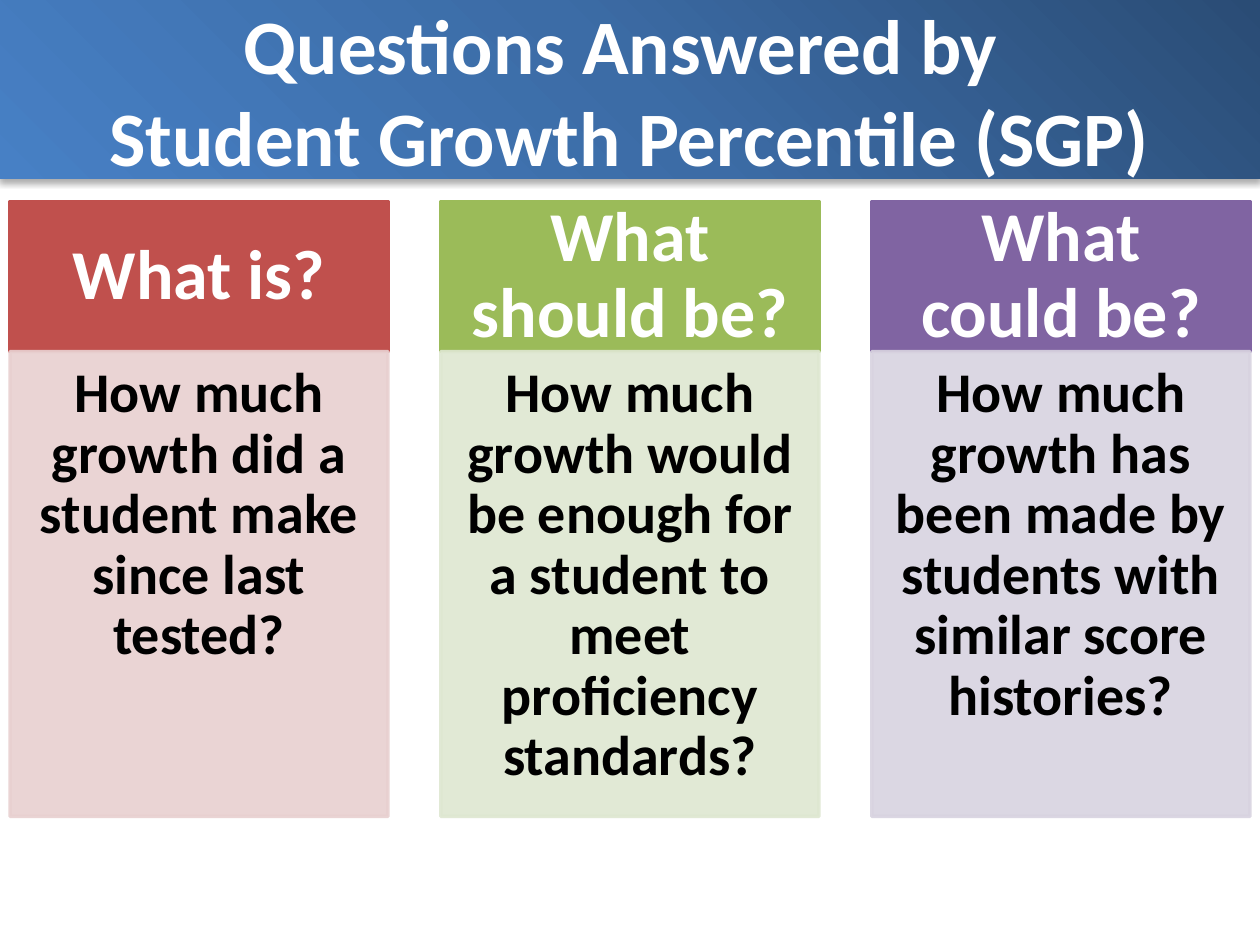
from lxml import etree
from pptx import Presentation
from pptx.dml.color import RGBColor
from pptx.enum import shapes, text
from pptx.oxml import parse_xml
from pptx.oxml.ns import nsdecls, qn
from pptx.util import Inches, Pt

TITLE = "Questions Answered by \nStudent Growth Percentile (SGP)"
# heading, question, heading colour, body colour
COLUMNS = [
    ("What is?", "How much growth did a student make since last tested?",
     "C0504D", "E8D0D0"),
    ("What should be?", "How much growth would be enough for a student to meet "
     "proficiency standards?", "9BBB59", "DEE7D1"),
    ("What could be?", "How much growth has been made by students with similar "
     "score histories?", "8064A2", "D8D3E0"),
]
THEME = {
    "font": "Calibri", "light": "FFFFFF", "dark": "000000",
    "title_size": 44, "heading_size": 40, "body_size": 32,
    "gradient": [(0, "2A4C75"), (50, "3C6CA6"), (100, "4780C5")],
    "body_opacity": 90,
}
SLIDE_WIDTH, SLIDE_HEIGHT = 10, 7.5
TITLE_HEIGHT = 1.42
MARGIN, COLUMN_WIDTH = 0.08, 3
COLUMN_STEP = (SLIDE_WIDTH - 2 * MARGIN - COLUMN_WIDTH) / (len(COLUMNS) - 1)
HEADING_TOP, HEADING_HEIGHT, BODY_HEIGHT = 1.6, 1.19, 3.69


def write(shape, words, size, color, anchor, insets, spacing=None):
    frame = shape.text_frame
    frame.word_wrap = True
    frame.auto_size = text.MSO_AUTO_SIZE.NONE
    frame.vertical_anchor = anchor
    frame.margin_left = frame.margin_right = Inches(insets[0])
    frame.margin_top = frame.margin_bottom = Inches(insets[1])
    paragraph = frame.paragraphs[0]
    paragraph.text = words
    paragraph.alignment = text.PP_ALIGN.CENTER
    paragraph.line_spacing = spacing
    font = paragraph.font
    font.name, font.size, font.bold = THEME["font"], Pt(size), True
    font.color.rgb = RGBColor.from_string(color)


def add_title(slide):
    title = slide.shapes.title
    title.left = title.top = 0
    title.width, title.height = Inches(SLIDE_WIDTH), Inches(TITLE_HEIGHT)
    stops = "".join(
        f'<a:gs pos="{position * 1000}"><a:srgbClr val="{color}"/></a:gs>'
        for position, color in THEME["gradient"])
    properties = title._element.spPr
    properties.append(parse_xml(
        f'<a:gradFill {nsdecls("a")} rotWithShape="1"><a:gsLst>{stops}</a:gsLst>'
        f'<a:lin ang="{135 * 60000}" scaled="0"/></a:gradFill>'))
    properties.append(parse_xml(
        f'<a:effectLst {nsdecls("a")}><a:outerShdw blurRad="{Pt(3.5)}" '
        f'dist="{Pt(2.2)}" dir="{90 * 60000}" rotWithShape="0">'
        '<a:srgbClr val="000000"><a:alpha val="32000"/></a:srgbClr>'
        '</a:outerShdw></a:effectLst>'))
    write(title, TITLE, THEME["title_size"], THEME["light"],
          text.MSO_ANCHOR.MIDDLE, (0.1, 0.05))


def add_panel(slide, left, top, height, color, opacity=100):
    panel = slide.shapes.add_shape(
        shapes.MSO_SHAPE.RECTANGLE, Inches(left), Inches(top),
        Inches(COLUMN_WIDTH), Inches(height))
    panel.shadow.inherit = False
    panel.fill.solid()
    panel.fill.fore_color.rgb = RGBColor.from_string(color)
    panel.line.color.rgb = RGBColor.from_string(color)
    panel.line.width = Pt(2)
    if opacity < 100:
        for paint in panel._element.spPr.iter(qn("a:srgbClr")):
            etree.SubElement(paint, qn("a:alpha")).set("val", str(opacity * 1000))
    return panel


def main():
    presentation = Presentation()
    presentation.slide_width = Inches(SLIDE_WIDTH)
    presentation.slide_height = Inches(SLIDE_HEIGHT)
    slide = presentation.slides.add_slide(presentation.slide_layouts[5])
    add_title(slide)
    for index, (heading, question, strong, pale) in enumerate(COLUMNS):
        left = MARGIN + index * COLUMN_STEP
        header = add_panel(slide, left, HEADING_TOP, HEADING_HEIGHT, strong)
        write(header, heading, THEME["heading_size"], THEME["light"],
              text.MSO_ANCHOR.MIDDLE, (0.23, 0.13), 0.9)
        body = add_panel(slide, left, HEADING_TOP + HEADING_HEIGHT, BODY_HEIGHT,
                         pale, THEME["body_opacity"])
        write(body, question, THEME["body_size"], THEME["dark"],
              text.MSO_ANCHOR.TOP, (0.1, 0.1), 0.9)
    presentation.save("out.pptx")


if __name__ == "__main__":
    main()
